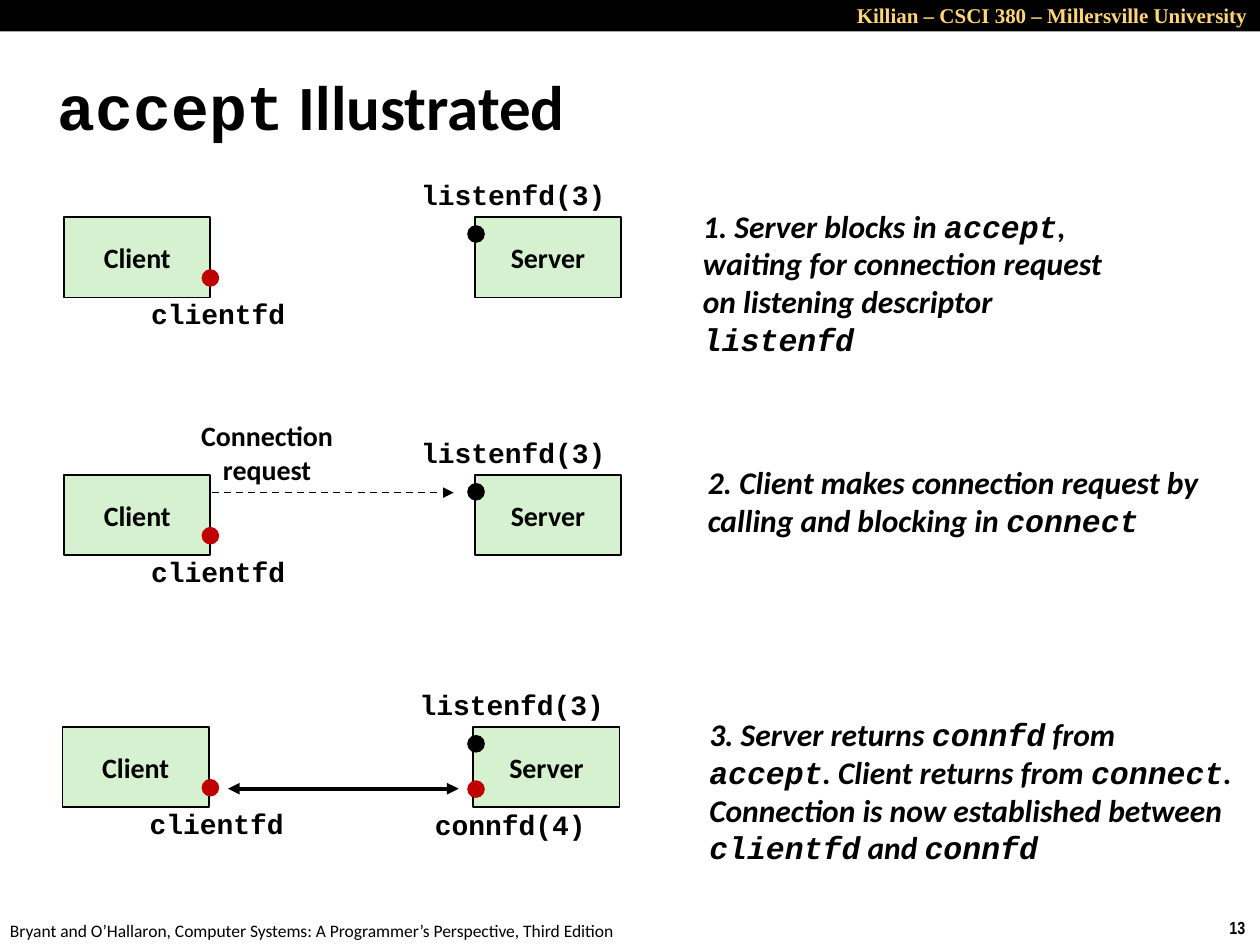
"""Build the slide that illustrates accept() in three client/server stages."""
from lxml import etree
from pptx import Presentation
from pptx.dml.color import RGBColor
from pptx.enum.dml import MSO_LINE
from pptx.enum.shapes import MSO_CONNECTOR, MSO_SHAPE
from pptx.enum.text import MSO_ANCHOR, MSO_AUTO_SIZE, PP_ALIGN
from pptx.oxml.ns import qn
from pptx.util import Pt

LEFT, CENTER, RIGHT = PP_ALIGN.LEFT, PP_ALIGN.CENTER, PP_ALIGN.RIGHT
TOP, MIDDLE = MSO_ANCHOR.TOP, MSO_ANCHOR.MIDDLE
RECT, OVAL = MSO_SHAPE.RECTANGLE, MSO_SHAPE.OVAL
STRAIGHT, DASH, FIT = MSO_CONNECTOR.STRAIGHT, MSO_LINE.DASH, MSO_AUTO_SIZE.SHAPE_TO_FIT_TEXT

COLORS = {"black": "000000", "box": "D5F1CF", "red": "C00000", "gold": "FFD579"}
SANS, MONO, SERIF, NARROW = "Calibri", "Courier New", "Times New Roman", "Arial Narrow"

HEADER = "Killian – CSCI 380 – Millersville University"
TITLE = "`accept` Illustrated"
FOOTER = "Bryant and O’Hallaron, Computer Systems: A Programmer’s Perspective, Third Edition"
PAGE = "13"
STAGES = [
    {"x": 36.7, "y": 124, "note_at": (394.6, 114.5, 259.2, 93.6),
     "note": "1. Server blocks in `accept`, waiting for connection request "
             "on listening descriptor `listenfd`"},
    {"x": 36.7, "y": 271.3, "note_at": (397.4, 260.6, 304.6, 51.1),
     "note": "2. Client makes connection request by calling and blocking in `connect`"},
    {"x": 35.8, "y": 415.3, "note_at": (398.2, 404.6, 316.1, 94.3),
     "note": "3. Server returns `connfd` from `accept`. Client returns from `connect`. "
             "Connection is now established between `clientfd` and `connfd`"},
]
BOX_W, BOX_H, SERVER_DX = 83.5, 46, 234.7
DOT, CLIENT_DOT_X, SERVER_DOT_X = 10.1, 115.2, 267

prs = Presentation()
prs.slide_width, prs.slide_height = Pt(720), Pt(540)
s = prs.slides.add_slide(prs.slide_layouts[6])


def rgb(name):
    return RGBColor.from_string(COLORS[name])


def write(tf, text, size, font=SANS, color="black", bold=True, italic=False,
          align=CENTER, anchor=MIDDLE, wrap=False):
    """Fill a text frame; parts between backticks are set as code."""
    tf.word_wrap, tf.vertical_anchor = wrap, anchor
    for i, line in enumerate(text.split("\n")):
        p = tf.paragraphs[0] if i == 0 else tf.add_paragraph()
        p.alignment = align
        p.font.size, p.font.bold, p.font.italic = Pt(size), bold, italic
        p.font.color.rgb = rgb(color)
        for j, part in enumerate(line.split("`")):
            if part:
                r = p.add_run()
                r.text = part
                r.font.name = MONO if j % 2 else font


def add_text(x, y, w, h, text, size, **style):
    tf = s.shapes.add_textbox(Pt(x), Pt(y), Pt(w), Pt(h)).text_frame
    tf.auto_size = FIT
    write(tf, text, size, **style)


def add_block(kind, x, y, w, h, fill, outlined=False):
    sp = s.shapes.add_shape(kind, Pt(x), Pt(y), Pt(w), Pt(h))
    sp.shadow.inherit = False
    sp.fill.solid()
    sp.fill.fore_color.rgb = rgb(fill)
    if outlined:
        sp.line.color.rgb = rgb("black")
        sp.line.width = Pt(1)
    else:
        sp.line.fill.background()
    return sp


def add_box(x, y, label):
    sp = add_block(RECT, x, y, BOX_W, BOX_H, "box", outlined=True)
    write(sp.text_frame, label, 16)


def add_dot(x, y, color):
    add_block(OVAL, x, y, DOT, DOT, color)


def add_arrow(x1, x2, y, width, ends, dash=None):
    c = s.shapes.add_connector(STRAIGHT, Pt(x1), Pt(y), Pt(x2), Pt(y))
    c.line.color.rgb = rgb("black")
    c.line.width = Pt(width)
    if dash:
        c.line.dash_style = dash
    ln = c.line._get_or_add_ln()
    for end in ends:
        etree.SubElement(ln, qn("a:" + end), type="triangle")
    etree.SubElement(c._element.spPr, qn("a:effectLst"))


add_text(695.5, 520.6, 24.5, 19.4, PAGE, 10, font=NARROW, align=LEFT, anchor=TOP)
add_text(-1.4, 522, 365.8, 19.4, FOOTER, 10, bold=False, align=LEFT, anchor=TOP)
add_block(RECT, 0, 0, 720, 18, "black")
add_text(324, -2.2, 396, 21.6, HEADER, 12, font=SERIF, color="gold",
         align=RIGHT, anchor=TOP, wrap=True)
add_text(26, 37.4, 660, 45.4, TITLE, 36, align=LEFT, wrap=True)

for stage in STAGES:
    x, y = stage["x"], stage["y"]
    add_box(x, y, "Client")
    add_box(x + SERVER_DX, y, "Server")
    add_text(x + 196.6, y - 26.4, 120.2, 26.6, "`listenfd(3)`", 16)
    add_text(x + 42.3, y + 41.8, 91.4, 26.6, "`clientfd`", 16)
    add_dot(CLIENT_DOT_X, y + 29.8, "red")
    add_dot(SERVER_DOT_X, y + 4.7, "black")
    add_text(*stage["note_at"], stage["note"], 18, italic=True, align=LEFT, wrap=True)

request_y, established_y = STAGES[1]["y"], STAGES[2]["y"]
add_text(107.3, request_y - 36, 90.7, 46, "Connection\nrequest", 16)
add_arrow(121, 259.2, request_y + 10.2, 1, ["tailEnd"], DASH)
add_dot(SERVER_DOT_X, established_y + 30.6, "red")
add_text(241.2, established_y + 42.6, 100.8, 26.6, "`connfd(4)`", 16)
add_arrow(130.3, 262.1, established_y + 35.4, 2.25, ["headEnd", "tailEnd"])

prs.save("out.pptx")
